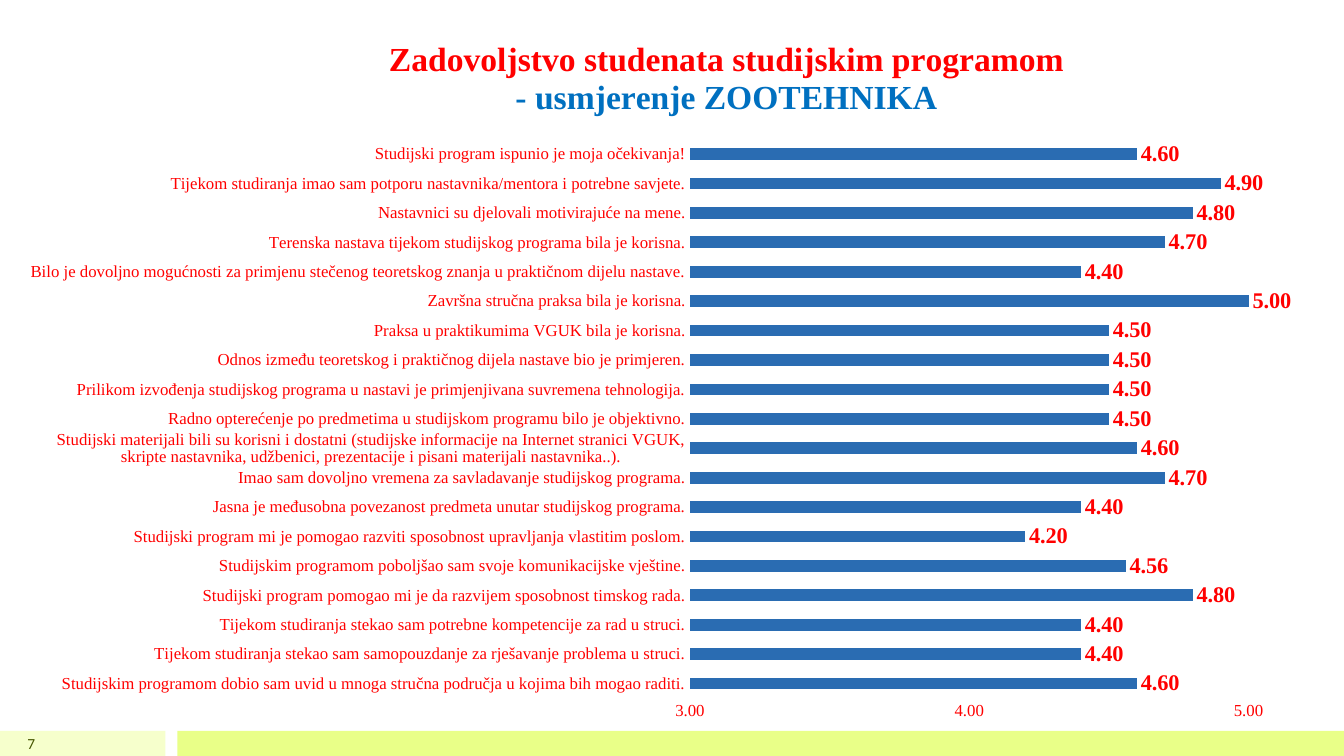
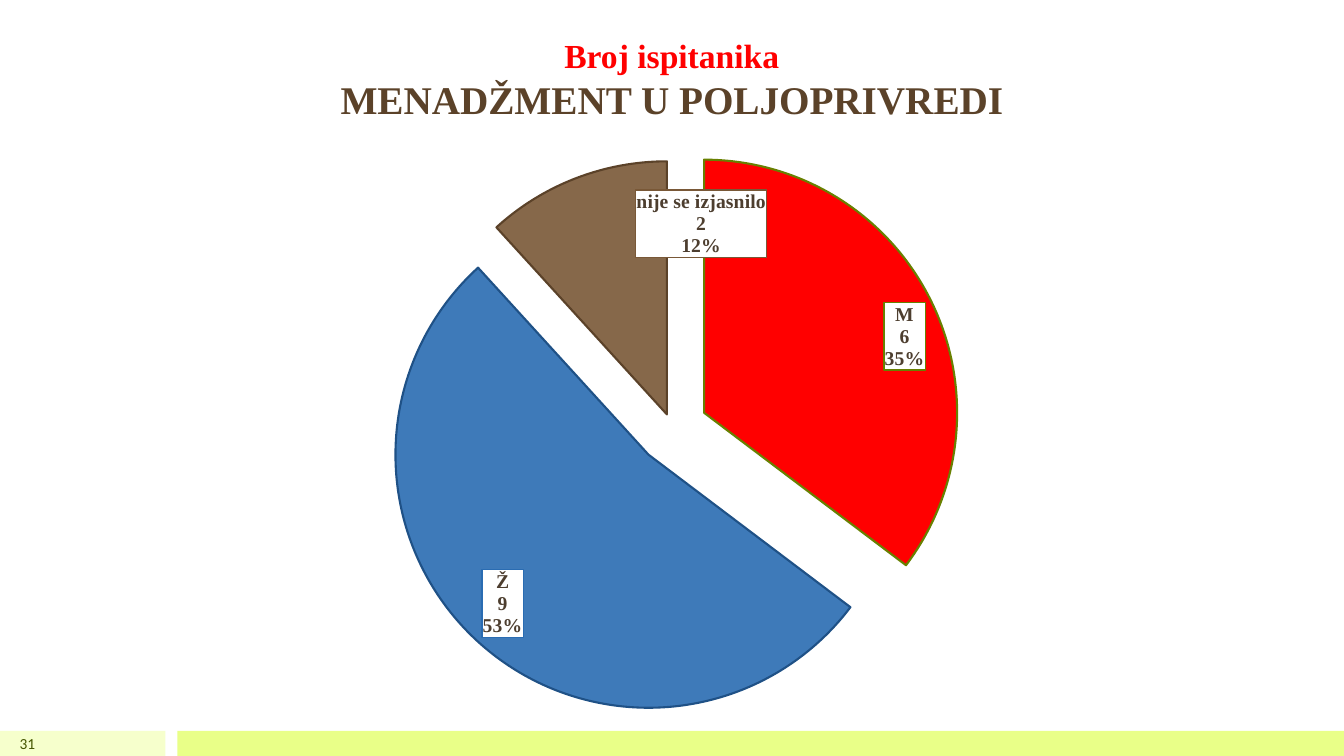
import pptx
import pptx.chart.data
import pptx.dml.color
import pptx.enum.chart
import pptx.enum.text
import pptx.enum.shapes
import pptx.oxml
import pptx.oxml.ns
import pptx.util
from pptx.util import Cm, Pt

COLORS = {
    "band_light": "F6FFCC", "band": "E9FF88", "number": "455500",
    "red": "FF0000", "heading_blue": "0070C0", "heading_brown": "5B4229",
    "bar": "2A6CB2", "brown": "795837", "label": "4D3E2F",
    "olive_line": "688000", "blue_line": "1F5186", "white": "FFFFFF",
}
SERIF = "Times New Roman"
TITLE = {"name": SERIF, "size": Pt(24), "bold": True}
AXIS = {"name": SERIF, "size": Pt(12), "bold": False}
VALUE_LABEL = {"name": SERIF, "size": Pt(16), "bold": True}
SLICE_LABEL = {"name": SERIF, "size": Pt(14), "bold": True}
NUMBER = {"name": "Calibri", "size": Pt(11)}


def style(font, values, color):
    for key, value in values.items():
        setattr(font, key, value)
    font.color.rgb = pptx.dml.color.RGBColor.from_string(COLORS[color])


def chart_xml(tag, content):
    return pptx.oxml.parse_xml(
        f'<c:{tag} {pptx.oxml.ns.nsdecls("c", "a")}>{content}</c:{tag}>')


prs = pptx.Presentation()
prs.slide_width, prs.slide_height = Cm(33.87), Cm(19.05)

# Shared footer: two bands and the slide number
slides = []
for page in ("7", "31"):
    slide = prs.slides.add_slide(prs.slide_layouts[6])
    slides.append(slide)
    for left, width, color in ((0, 4.17, "band_light"), (4.47, 29.4, "band")):
        band = slide.shapes.add_shape(
            pptx.enum.shapes.MSO_SHAPE.RECTANGLE,
            Cm(left), Cm(18.42), Cm(width), Cm(0.63))
        band.shadow.inherit = False
        band.fill.solid()
        band.fill.fore_color.rgb = pptx.dml.color.RGBColor.from_string(COLORS[color])
        band.line.fill.background()
    number = slide.shapes.add_textbox(0, Cm(18.42), Cm(1.14), Cm(0.63)).text_frame
    number.word_wrap = True
    number.vertical_anchor = pptx.enum.text.MSO_ANCHOR.MIDDLE
    number.text = page
    number.paragraphs[0].alignment = pptx.enum.text.PP_ALIGN.RIGHT
    style(number.paragraphs[0].runs[0].font, NUMBER, "number")
satisfaction_slide, respondents_slide = slides

# Satisfaction by statement, listed from the bottom bar up
ratings = [
    ("Studijskim programom dobio sam uvid u mnoga stručna područja u kojima bih mogao raditi.", 4.6),
    ("Tijekom studiranja stekao sam samopouzdanje za rješavanje problema u struci.", 4.4),
    ("Tijekom studiranja stekao sam potrebne kompetencije za rad u struci.", 4.4),
    ("Studijski program pomogao mi je da razvijem sposobnost timskog rada.", 4.8),
    ("Studijskim programom poboljšao sam svoje komunikacijske vještine.", 4.56),
    ("Studijski program mi je pomogao razviti sposobnost upravljanja vlastitim poslom.", 4.2),
    ("Jasna je međusobna povezanost predmeta unutar studijskog programa.", 4.4),
    ("Imao sam dovoljno vremena za savladavanje studijskog programa.", 4.7),
    ("Studijski materijali bili su korisni i dostatni (studijske informacije na Internet stranici VGUK, "
     "skripte nastavnika, udžbenici, prezentacije i pisani materijali nastavnika..).", 4.6),
    ("Radno opterećenje po predmetima u studijskom programu bilo je objektivno.", 4.5),
    ("Prilikom izvođenja studijskog programa u nastavi je primjenjivana suvremena tehnologija.", 4.5),
    ("Odnos između teoretskog i praktičnog dijela nastave bio je primjeren.", 4.5),
    ("Praksa u praktikumima VGUK bila je korisna.", 4.5),
    ("Završna stručna praksa bila je korisna.", 5),
    ("Bilo je dovoljno mogućnosti za primjenu stečenog teoretskog znanja u praktičnom dijelu nastave.", 4.4),
    ("Terenska nastava tijekom studijskog programa bila je korisna.", 4.7),
    ("Nastavnici su djelovali motivirajuće na mene.", 4.8),
    ("Tijekom studiranja imao sam potporu nastavnika/mentora i potrebne savjete.", 4.9),
    ("Studijski program ispunio je moja očekivanja!", 4.6),
]
rating_data = pptx.chart.data.CategoryChartData()
rating_data.categories = [statement for statement, _ in ratings]
rating_data.add_series("Series 1", [rating for _, rating in ratings])
satisfaction = satisfaction_slide.shapes.add_chart(
    pptx.enum.chart.XL_CHART_TYPE.BAR_CLUSTERED,
    Cm(0.56), Cm(0.36), Cm(32.74), Cm(18.34), rating_data).chart
satisfaction.has_legend = False
style(satisfaction.font, AXIS, "red")

# Two-colour chart title
heading = satisfaction.chart_title.text_frame
heading.text = "Zadovoljstvo studenata studijskim programom\n- usmjerenje ZOOTEHNIKA"
for paragraph, color in zip(heading.paragraphs, ("red", "heading_blue")):
    paragraph.alignment = pptx.enum.text.PP_ALIGN.CENTER
    style(paragraph.runs[0].font, TITLE, color)
satisfaction.chart_title.include_in_layout = False

# Places of the title and the plot, as shares of the chart
title_place = chart_xml("layout", (
    '<c:manualLayout><c:xMode val="edge"/><c:yMode val="edge"/>'
    '<c:x val="0.28"/><c:y val="0.03"/></c:manualLayout>'))
plot_place = chart_xml("layout", (
    '<c:manualLayout><c:layoutTarget val="inner"/>'
    '<c:xMode val="edge"/><c:yMode val="edge"/><c:x val="0.514"/><c:y val="0.172"/>'
    '<c:w val="0.43"/><c:h val="0.768"/></c:manualLayout>'))
for parent, place, index in (("c:title", title_place, 1), ("c:plotArea", plot_place, 0)):
    holder = satisfaction.element.xpath(f".//{parent}")[0]
    for old in holder.xpath("./c:layout"):
        holder.remove(old)
    holder.insert(index, place)

# Axes
axis_format = {
    "has_major_gridlines": False,
    "major_tick_mark": pptx.enum.chart.XL_TICK_MARK.NONE,
    "minor_tick_mark": pptx.enum.chart.XL_TICK_MARK.NONE,
}
scale_format = {"minimum_scale": 3, "maximum_scale": 5, "major_unit": 1}
for axis, extra in ((satisfaction.category_axis, {}),
                    (satisfaction.value_axis, scale_format)):
    for key, value in {**axis_format, **extra}.items():
        setattr(axis, key, value)
    axis.format.line.fill.background()
    style(axis.tick_labels.font, AXIS, "red")

# Bars and their values
bars = satisfaction.plots[0]
bars.gap_width = 150
bars.vary_by_categories = False
bars.series[0].format.fill.solid()
bars.series[0].format.fill.fore_color.rgb = pptx.dml.color.RGBColor.from_string(COLORS["bar"])
bar_labels = bars.series[0].data_labels
bar_labels.show_value = True
bar_labels.position = pptx.enum.chart.XL_LABEL_POSITION.OUTSIDE_END
style(bar_labels.font, VALUE_LABEL, "red")
for numbers in (bar_labels, satisfaction.value_axis.tick_labels):
    numbers.number_format = "0.00"
    numbers.number_format_is_linked = False

# Respondents: name, count, fill, opacity %, outline, label outline, explosion %, label shift
respondents = [
    ("M", 6, "red", 100, "olive_line", "olive_line", 14, (0, 0)),
    ("Ž", 9, "bar", 90, "blue_line", "bar", 14, (0, 0)),
    ("nije se izjasnilo", 2, "brown", 90, "heading_brown", "brown", 6, (0.05, 0.01)),
]
respondent_data = pptx.chart.data.CategoryChartData()
respondent_data.categories = [row[0] for row in respondents]
respondent_data.add_series("Series 1", [row[1] for row in respondents])
gender = respondents_slide.shapes.add_chart(
    pptx.enum.chart.XL_CHART_TYPE.PIE,
    Cm(2.29), Cm(3.18), Cm(29.31), Cm(15.24), respondent_data).chart
gender.has_legend = False
gender.has_title = False
style(gender.font, {"name": "Calibri", "size": Pt(10)}, "label")
gender.plots[0].vary_by_categories = True

# Slices with boxed labels
for index, (_, _, fill, opacity, outline, box, explosion, shift) in enumerate(respondents):
    point = gender.plots[0].series[0].points[index]
    point.format.fill.solid()
    point.format.fill.fore_color.rgb = pptx.dml.color.RGBColor.from_string(COLORS[fill])
    point.format.line.color.rgb = pptx.dml.color.RGBColor.from_string(COLORS[outline])
    point.format.line.width = Pt(1.5)
    style(point.data_label.font, SLICE_LABEL, "label")
    point.data_label.position = pptx.enum.chart.XL_LABEL_POSITION.INSIDE_END

    slice_xml = gender.element.xpath(f".//c:dPt[c:idx/@val='{index}']")[0]
    slice_xml.xpath("./c:spPr")[0].addprevious(
        pptx.oxml.parse_xml(f'<c:explosion {pptx.oxml.ns.nsdecls("c")} val="{explosion}"/>'))
    slice_xml.xpath("./c:spPr/a:solidFill/a:srgbClr")[0].append(
        pptx.oxml.parse_xml(f'<a:alpha {pptx.oxml.ns.nsdecls("a")} val="{opacity * 1000}"/>'))

    label_xml = gender.element.xpath(f".//c:dLbl[c:idx/@val='{index}']")[0]
    label_xml.xpath("./c:txPr")[0].addprevious(chart_xml("spPr", (
        f'<a:solidFill><a:srgbClr val="{COLORS["white"]}"/></a:solidFill>'
        f'<a:ln w="12700"><a:solidFill><a:srgbClr val="{COLORS[box]}"/></a:solidFill></a:ln>')))
    if any(shift):
        label_xml.insert(1, chart_xml("layout", (
            f'<c:manualLayout><c:x val="{shift[0]}"/><c:y val="{shift[1]}"/></c:manualLayout>')))
    for flag in ("showVal", "showCatName", "showPercent"):
        label_xml.xpath(f"./c:{flag}")[0].set("val", "1")
    label_xml.append(chart_xml("separator", "\n"))

# Respondents heading
heading = respondents_slide.shapes.add_textbox(
    Cm(3.91), Cm(0.76), Cm(26.04), Cm(3.28)).text_frame
heading.word_wrap = True
heading.text = "Broj ispitanika\nMENADŽMENT U POLJOPRIVREDI"
for paragraph, size, color in zip(heading.paragraphs, (24, 28), ("red", "heading_brown")):
    paragraph.alignment = pptx.enum.text.PP_ALIGN.CENTER
    style(paragraph.runs[0].font, {**TITLE, "size": Pt(size)}, color)

prs.save("out.pptx")
